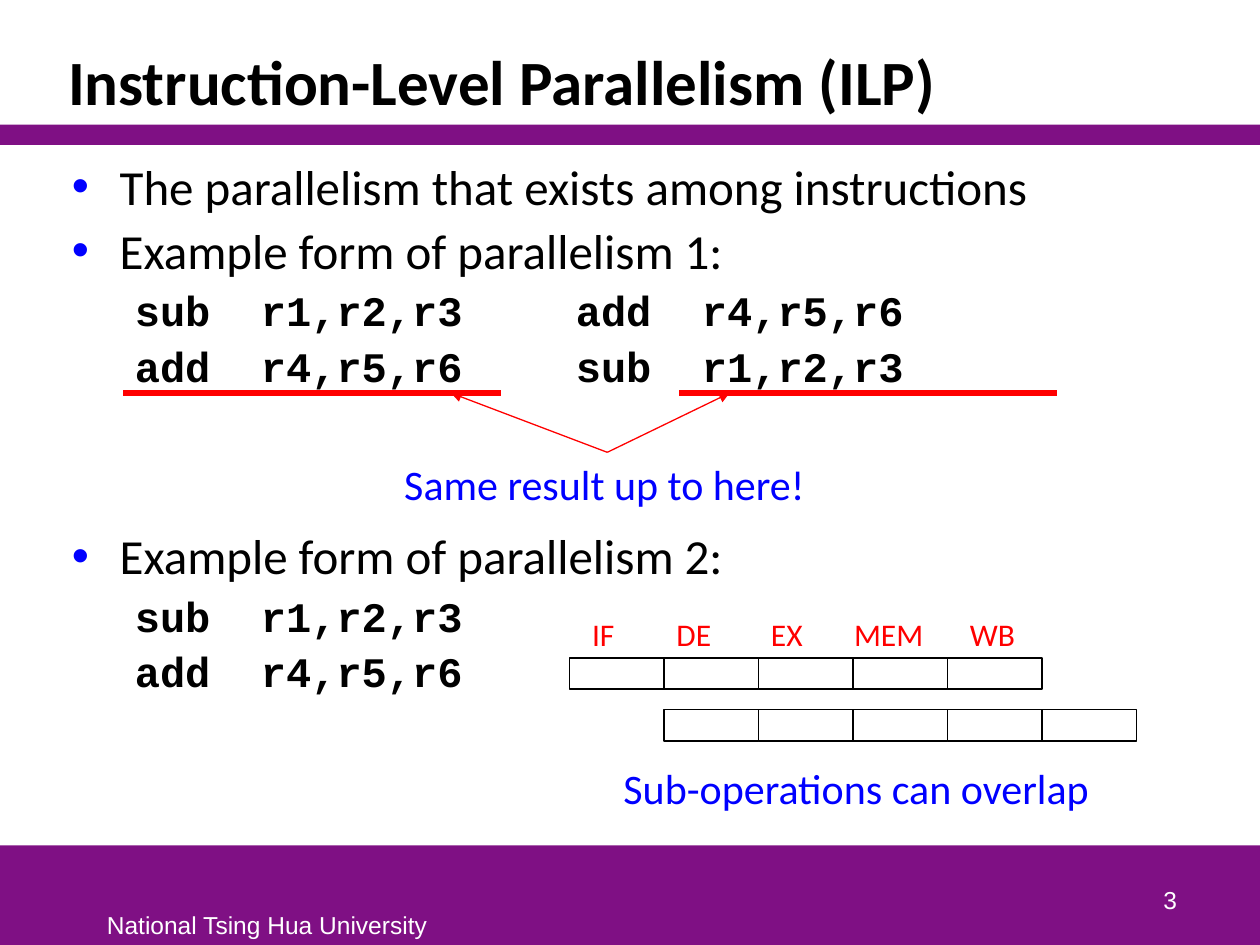
from dataclasses import dataclass

from lxml import etree
from pptx import Presentation
from pptx.dml.color import RGBColor
from pptx.enum import shapes, text
from pptx.oxml import ns
from pptx.util import Inches, Pt


@dataclass(frozen=True)
class Theme:
    purple: str = "7F1084"
    black: str = "000000"
    white: str = "FFFFFF"
    blue: str = "0000FF"
    red: str = "FF0000"
    sans: str = "Calibri"
    code: str = "Courier New"
    footer: str = "Arial"
    title_size: int = 36
    bullet_size: int = 28
    code_size: int = 24
    stage_size: int = 18
    footer_size: int = 14


@dataclass(frozen=True)
class Point:
    x: float
    y: float


@dataclass(frozen=True)
class Box:
    left: float
    top: float
    width: float
    height: float

    def lengths(self) -> tuple:
        return tuple(map(Inches, (self.left, self.top, self.width, self.height)))


@dataclass(frozen=True)
class Item:
    words: str
    is_code: bool = False
    before: float = 3


@dataclass(frozen=True)
class Stage:
    name: str
    left: float
    width: float


THEME = Theme()
CELL_WIDTH, CELL_HEIGHT = 0.75, 0.25
PIPELINE_LEFT, PIPELINE_TOP, PIPELINE_STEP = 4.52, 5.22, 0.41
RESULT_Y = 3.12
MEETING = Point(4.82, 3.59)

ITEMS = [
    Item("The parallelism that exists among instructions", before=0),
    Item("Example form of parallelism 1:"),
    Item("sub  r1,r2,r3 \t\tadd  r4,r5,r6", is_code=True),
    Item("add  r4,r5,r6\t\tsub  r1,r2,r3", is_code=True),
    Item("Example form of parallelism 2:", before=77.4),
    Item("sub  r1,r2,r3", is_code=True),
    Item("add  r4,r5,r6", is_code=True),
]
STAGES = [
    Stage("IF", 4.6, 0.38),
    Stage("DE", 5.27, 0.51),
    Stage("EX", 6.02, 0.46),
    Stage("MEM", 6.68, 0.76),
    Stage("WB", 7.6, 0.56),
]


def write(paragraph, words: str, *, size: float, color: str, font: str = THEME.sans,
          bold: bool = False, align=text.PP_ALIGN.LEFT) -> None:
    paragraph.alignment = align
    run = paragraph.add_run()
    run.text = words
    run.font.name = font
    run.font.size = Pt(size)
    run.font.bold = bold
    run.font.color.rgb = RGBColor.from_string(color)


def place(placeholder, box: Box, anchor):
    placeholder.left, placeholder.top, placeholder.width, placeholder.height = box.lengths()
    frame = placeholder.text_frame
    frame.auto_size = text.MSO_AUTO_SIZE.NONE
    frame.vertical_anchor = anchor
    return frame


def add_label(owner, box: Box, words: str, *, wrap: bool = False,
              anchor=text.MSO_ANCHOR.TOP, **style) -> None:
    frame = owner.shapes.add_textbox(*box.lengths()).text_frame
    frame.word_wrap = wrap
    frame.vertical_anchor = anchor
    write(frame.paragraphs[0], words, **style)


def add_rectangle(owner, box: Box, *, fill: str | None = None, line: str | None = None) -> None:
    rectangle = owner.shapes.add_shape(shapes.MSO_SHAPE.RECTANGLE, *box.lengths())
    rectangle.shadow.inherit = False
    if fill:
        rectangle.fill.solid()
        rectangle.fill.fore_color.rgb = RGBColor.from_string(fill)
    else:
        rectangle.fill.background()
    if line:
        rectangle.line.color.rgb = RGBColor.from_string(line)
        rectangle.line.width = Pt(1)
    else:
        rectangle.line.fill.background()


def add_line(slide, start: Point, end: Point, *, width: float, arrow: bool = False) -> None:
    line = slide.shapes.add_connector(
        shapes.MSO_CONNECTOR.STRAIGHT,
        *map(Inches, (start.x, start.y, end.x, end.y)))
    line.line.color.rgb = RGBColor.from_string(THEME.red)
    line.line.width = Pt(width)
    if arrow:
        etree.SubElement(line.line._get_or_add_ln(), ns.qn("a:tailEnd"), type="triangle")
    etree.SubElement(line._element.spPr, ns.qn("a:effectLst"))


def add_item(paragraph, item: Item) -> None:
    paragraph.level = 1 if item.is_code else 0
    paragraph.space_before = Pt(item.before)
    properties = paragraph._p.get_or_add_pPr()
    margin, indent = (0.5, 0) if item.is_code else (0.38, -0.38)
    properties.set("marL", str(Inches(margin)))
    properties.set("indent", str(Inches(indent)))
    if item.is_code:
        etree.SubElement(properties, ns.qn("a:buNone"))
        write(paragraph, item.words, size=THEME.code_size, color=THEME.black,
              font=THEME.code, bold=True)
    else:
        bullet_color = etree.SubElement(properties, ns.qn("a:buClr"))
        etree.SubElement(bullet_color, ns.qn("a:srgbClr"), val=THEME.blue)
        etree.SubElement(properties, ns.qn("a:buFont"), typeface=THEME.footer)
        etree.SubElement(properties, ns.qn("a:buChar"), char="•")
        write(paragraph, item.words, size=THEME.bullet_size, color=THEME.black)


def add_pipeline(slide) -> None:
    pipeline = slide.shapes.add_group_shape()
    for instruction in range(2):
        for position in range(len(STAGES)):
            left = PIPELINE_LEFT + (instruction + position) * CELL_WIDTH
            top = PIPELINE_TOP + instruction * PIPELINE_STEP
            add_rectangle(pipeline, Box(left, top, CELL_WIDTH, CELL_HEIGHT), line=THEME.black)
    for stage in STAGES:
        add_label(pipeline, Box(stage.left, 4.83, stage.width, 0.4), stage.name,
                  size=THEME.stage_size, color=THEME.red)


def main() -> None:
    deck = Presentation()
    deck.slide_width, deck.slide_height = Inches(10), Inches(7.5)
    slide = deck.slides.add_slide(deck.slide_layouts[1])

    for band in (Box(0, 6.71, 10, 0.79), Box(0, 0.99, 10, 0.16)):
        add_rectangle(slide, band, fill=THEME.purple)
    footer_style = dict(size=THEME.footer_size, color=THEME.white, font=THEME.footer)
    add_label(slide, Box(0.75, 7.17, 2.76, 0.33), "National Tsing Hua University", **footer_style)
    add_label(slide, Box(7.36, 6.81, 2.08, 0.5), "3", wrap=True,
              anchor=text.MSO_ANCHOR.BOTTOM, align=text.PP_ALIGN.RIGHT, **footer_style)

    heading = place(slide.shapes.title, Box(0.44, 0.25, 8.97, 0.74),
                    text.MSO_ANCHOR.BOTTOM).paragraphs[0]
    heading.line_spacing = 0.85
    write(heading, "Instruction-Level Parallelism (ILP)", size=THEME.title_size,
          color=THEME.black, bold=True)

    body = place(slide.placeholders[1], Box(0.47, 1.19, 8.94, 5.39), text.MSO_ANCHOR.TOP)
    for index, item in enumerate(ITEMS):
        add_item(body.add_paragraph() if index else body.paragraphs[0], item)

    for left in (0.98, 5.39):
        add_line(slide, Point(left, RESULT_Y), Point(left + 3, RESULT_Y), width=3)
    for tip in (5.79, 3.58):
        add_line(slide, MEETING, Point(tip, RESULT_Y), width=0.75, arrow=True)

    remark_style = dict(size=THEME.code_size, color=THEME.blue)
    add_label(slide, Box(3.11, 3.59, 3.41, 0.5), "Same result up to here!", **remark_style)
    add_pipeline(slide)
    add_label(slide, Box(4.85, 6, 3.93, 0.5), "Sub-operations can overlap", **remark_style)

    deck.save("out.pptx")


if __name__ == "__main__":
    main()
